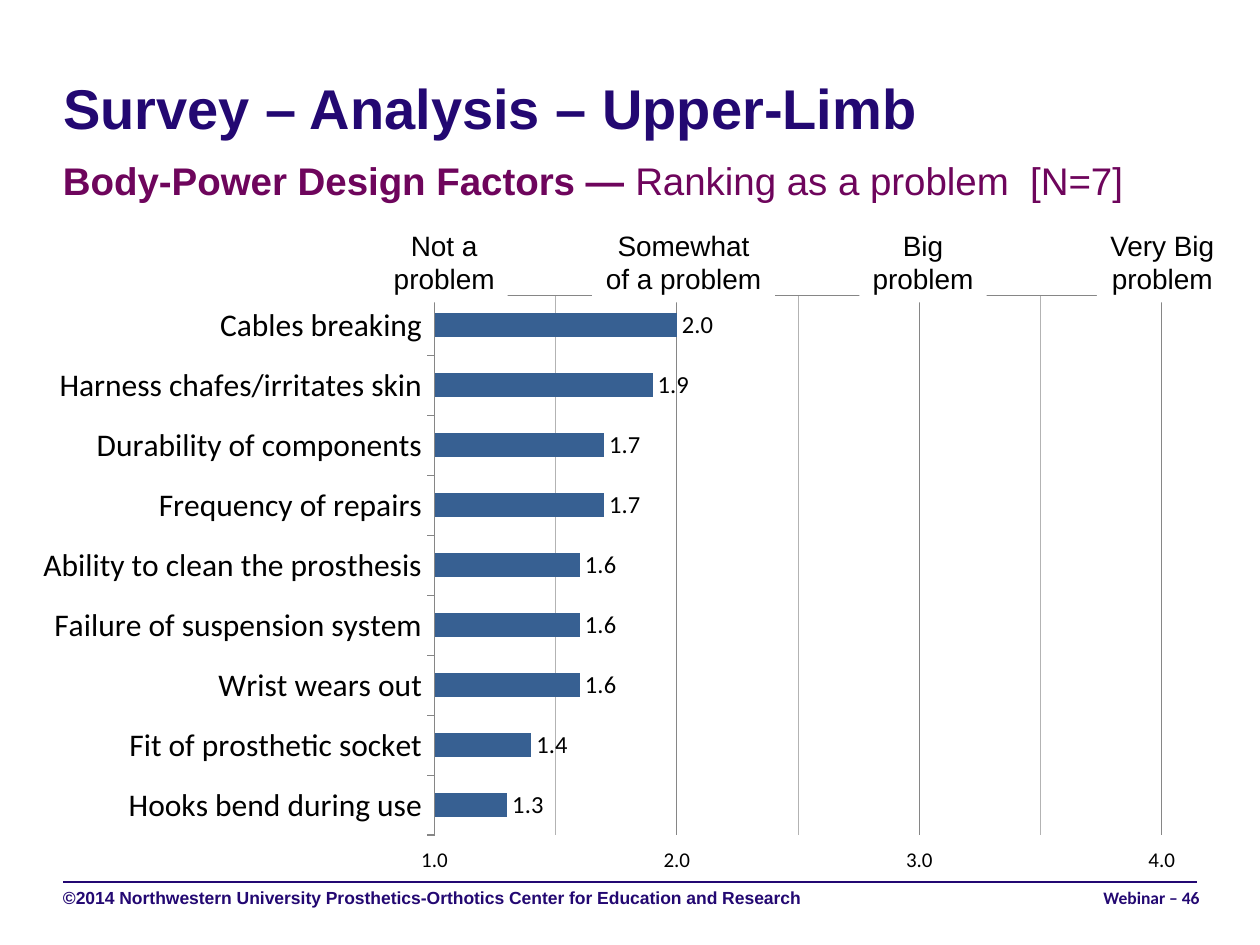
from dataclasses import dataclass

from pptx import Presentation
from pptx.chart.data import CategoryChartData
from pptx.dml.color import RGBColor
from pptx.enum.chart import XL_CHART_TYPE as ChartType
from pptx.enum.chart import XL_LABEL_POSITION as LabelPosition
from pptx.enum.chart import XL_TICK_LABEL_POSITION as TickLabels
from pptx.enum.chart import XL_TICK_MARK as TickMark
from pptx.enum.shapes import MSO_CONNECTOR as Connector
from pptx.enum.shapes import MSO_SHAPE as Preset
from pptx.enum.text import MSO_ANCHOR as Anchor
from pptx.enum.text import MSO_AUTO_SIZE as AutoSize
from pptx.enum.text import PP_ALIGN as Align
from pptx.oxml import parse_xml
from pptx.oxml.ns import nsdecls, qn
from pptx.oxml.xmlchemy import OxmlElement
from pptx.util import Inches, Pt

COLUMNS, ROWS = 100, 75
FACTORS = {
    "Cables breaking": 2.0,
    "Harness chafes/irritates skin": 1.9,
    "Durability of components": 1.7,
    "Frequency of repairs": 1.7,
    "Ability to clean the prosthesis": 1.6,
    "Failure of suspension system": 1.6,
    "Wrist wears out": 1.6,
    "Fit of prosthetic socket": 1.4,
    "Hooks bend during use": 1.3,
}
RATINGS = [
    (("Not a", "problem"), 10.1),
    (("Somewhat", "of a problem"), 14.5),
    (("Big", "problem"), 10.1),
    (("Very Big", "problem"), 10.4),
]
FIRST_RATING, RATING_STEP = 35.25, 19
PLOT_AREA = {"x": 0.35, "y": 0.02, "w": 0.62, "h": 0.9}


def color(value):
    return RGBColor.from_string(value)


def assign(target, values):
    for name, value in values.items():
        setattr(target, name, value)


@dataclass(frozen=True)
class Theme:
    navy: str = "230872"
    plum: str = "6E055C"
    bar: str = "376092"
    axis: str = "868686"
    minor: str = "B3B3B3"
    black: str = "000000"
    white: str = "FFFFFF"
    heading: str = "Arial"
    body: str = "Calibri"
    title: int = 32
    subtitle: int = 22
    category: int = 18
    rating: int = 16
    value: int = 14
    scale: int = 12
    footer: int = 10


class SlideBuilder:
    """Draws styled elements on one slide, measured in grid columns and rows."""

    def __init__(self, presentation, theme):
        self.theme = theme
        self.column = presentation.slide_width / COLUMNS
        self.row = presentation.slide_height / ROWS
        self.slide = presentation.slides.add_slide(presentation.slide_layouts[5])

    def place(self, left, top, width, height):
        across = [round(self.column * n) for n in (left, width)]
        down = [round(self.row * n) for n in (top, height)]
        return across[0], down[0], across[1], down[1]

    def font(self, font, size, ink, name, bold=False):
        assign(font, {"size": Pt(size), "name": name, "bold": bold})
        font.color.rgb = color(ink)

    def fill_text(self, frame, paragraphs, align=Align.LEFT, anchor=Anchor.TOP, top=0.0, wrap=True):
        assign(frame, {
            "word_wrap": wrap, "auto_size": AutoSize.NONE, "vertical_anchor": anchor,
            "margin_left": 0, "margin_right": 0, "margin_top": Inches(top), "margin_bottom": 0,
        })
        for index, runs in enumerate(paragraphs):
            paragraph = frame.add_paragraph() if index else frame.paragraphs[0]
            paragraph.alignment = align
            for text, *style in runs:
                run = paragraph.add_run()
                run.text = text
                self.font(run.font, *style)

    def title(self, box, text):
        shape = self.slide.shapes.title
        assign(shape, dict(zip(("left", "top", "width", "height"), self.place(*box))))
        theme = self.theme
        run = (text, theme.title, theme.navy, theme.heading, True)
        self.fill_text(shape.text_frame, [[run]], anchor=Anchor.BOTTOM)

    def text(self, box, runs, **layout):
        shape = self.slide.shapes.add_textbox(*self.place(*box))
        self.fill_text(shape.text_frame, [runs], **layout)

    def line(self, left, right, top):
        x, y, width, _ = self.place(left, top, right - left, 0)
        line = self.slide.shapes.add_connector(Connector.STRAIGHT, x, y, x + width, y)
        self.stroke(line.line, self.theme.navy, 1)
        line._element.spPr.append(OxmlElement("a:effectLst"))

    def stroke(self, line, ink, width):
        line.color.rgb = color(ink)
        line.width = Pt(width)

    def ratings(self, top, height):
        theme = self.theme
        group = self.slide.shapes.add_group_shape()
        for index, (lines, width) in enumerate(RATINGS):
            left = FIRST_RATING + RATING_STEP * index - width / 2
            box = self.place(left, top, width, height)
            shape = group.shapes.add_shape(Preset.RECTANGLE, *box)
            shape.shadow.inherit = False
            shape.fill.solid()
            shape.fill.fore_color.rgb = color(theme.white)
            shape.line.fill.background()
            paragraphs = [[(text, theme.rating, theme.black, theme.heading)] for text in lines]
            self.fill_text(shape.text_frame, paragraphs, Align.CENTER, Anchor.MIDDLE, wrap=False)

    def chart(self, box):
        theme = self.theme
        data = CategoryChartData(number_format="0.0")
        data.categories = list(FACTORS)
        data.add_series("Series 1", list(FACTORS.values()))
        frame = self.slide.shapes.add_chart(ChartType.BAR_CLUSTERED, *self.place(*box), data)
        chart = frame.chart
        assign(chart, {"has_legend": False, "has_title": False})
        self.font(chart.font, theme.footer, theme.black, theme.body)
        self.axes(chart)
        plot = chart.plots[0]
        assign(plot, {"gap_width": 150, "vary_by_categories": False, "has_data_labels": True})
        fill = plot.series[0].format.fill
        fill.solid()
        fill.fore_color.rgb = color(theme.bar)
        labels = plot.data_labels
        assign(labels, {
            "show_value": True, "number_format": "0.0",
            "number_format_is_linked": False, "position": LabelPosition.OUTSIDE_END,
        })
        self.font(labels.font, theme.value, theme.black, theme.body)
        self.fix_plot_area(chart)

    def axes(self, chart):
        theme = self.theme
        categories, values = chart.category_axis, chart.value_axis
        assign(categories, {"reverse_order": True, "has_major_gridlines": False})
        assign(values, {
            "minimum_scale": 1, "maximum_scale": 4, "major_unit": 1, "minor_unit": 0.5,
            "has_major_gridlines": True, "has_minor_gridlines": True,
            "tick_label_position": TickLabels.HIGH,
        })
        assign(values.tick_labels, {"number_format": "0.0", "number_format_is_linked": False})
        for axis, size in ((categories, theme.category), (values, theme.scale)):
            axis.major_tick_mark = TickMark.OUTSIDE
            axis.minor_tick_mark = TickMark.NONE
            self.stroke(axis.format.line, theme.axis, 0.75)
            self.font(axis.tick_labels.font, size, theme.black, theme.body)
        self.stroke(values.major_gridlines.format.line, theme.axis, 0.75)
        minor = values._element.find(qn("c:minorGridlines"))
        minor.append(parse_xml(
            f'<c:spPr {nsdecls("c", "a")}><a:ln w="6350"><a:solidFill>'
            f'<a:srgbClr val="{theme.minor}"/></a:solidFill></a:ln></c:spPr>'))

    def fix_plot_area(self, chart):
        area = chart._chartSpace.find(f'{qn("c:chart")}/{qn("c:plotArea")}')
        for layout in area.findall(qn("c:layout")):
            area.remove(layout)
        modes = '<c:xMode val="edge"/><c:yMode val="edge"/>'
        sizes = "".join(f'<c:{name} val="{share}"/>' for name, share in PLOT_AREA.items())
        area.insert(0, parse_xml(
            f'<c:layout {nsdecls("c")}><c:manualLayout><c:layoutTarget val="inner"/>'
            f'{modes}{sizes}</c:manualLayout></c:layout>'))


def main():
    presentation = Presentation()
    assign(presentation, {"slide_width": Inches(10), "slide_height": Inches(7.5)})
    theme = Theme()
    builder = SlideBuilder(presentation, theme)
    subtitle = (theme.subtitle, theme.plum, theme.heading)
    builder.line(5, 95, 70)
    builder.chart((1.9, 22.5, 93.1, 47.6))
    builder.title((5, 5.8, 90, 5.4), "Survey – Analysis – Upper-Limb")
    builder.text((5, 12.5, 90, 5), [
        ("Body-Power Design Factors — ", *subtitle, True),
        ("Ranking as a problem  [N=7]", *subtitle),
    ])
    builder.ratings(17.6, 6.4)
    credit = "©2014 Northwestern University Prosthetics-Orthotics Center for Education and Research"
    page = ("Webinar – 46", theme.footer, theme.navy, theme.body, True)
    builder.text((5, 70.1, 66.7, 4), [(credit, theme.footer, theme.navy, theme.heading, True)], top=0.03)
    builder.text((71.9, 70.1, 23.3, 4), [page], align=Align.RIGHT, top=0.03)
    presentation.save("out.pptx")


if __name__ == "__main__":
    main()
